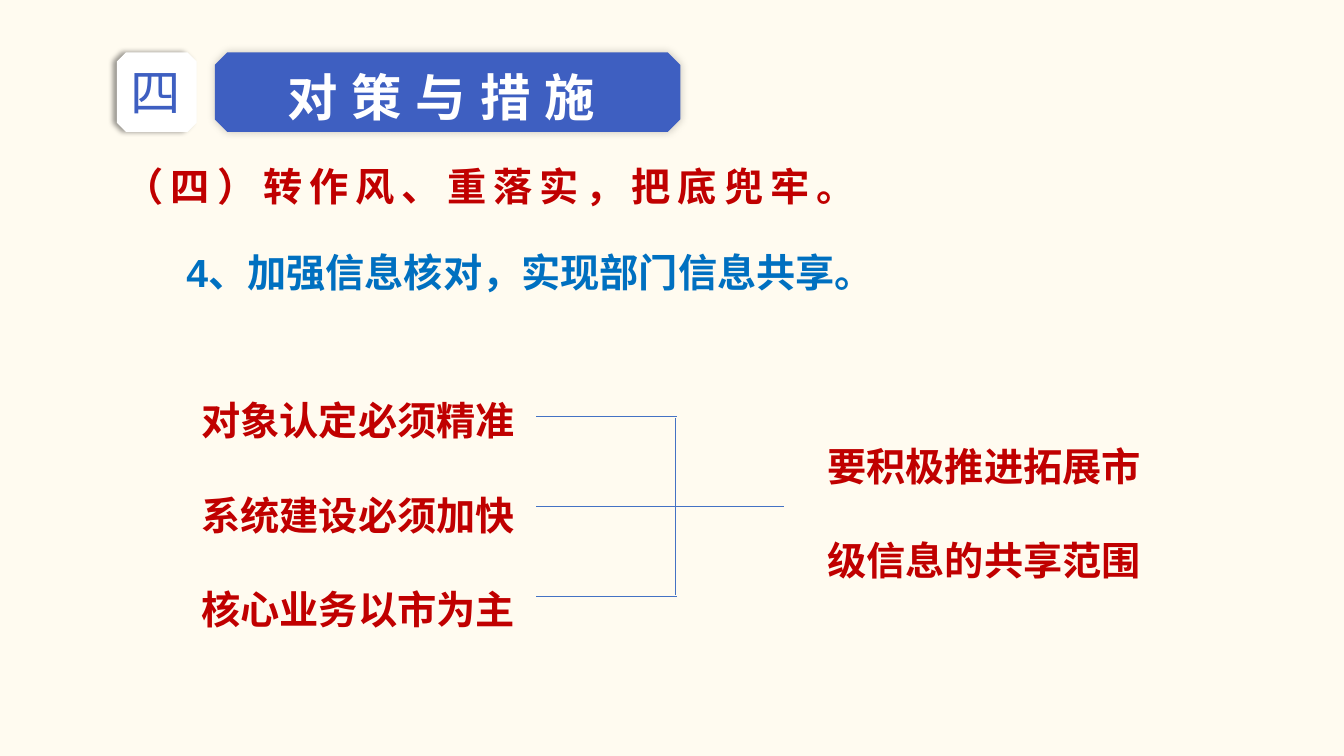
"""Build the slide on sharing information between departments."""
from lxml import etree
from pptx import Presentation
from pptx.dml.color import RGBColor
from pptx.enum.shapes import MSO_CONNECTOR, MSO_SHAPE
from pptx.oxml.ns import qn
from pptx.util import Inches, Pt

OCTAGON = MSO_SHAPE.OCTAGON
STRAIGHT = MSO_CONNECTOR.STRAIGHT
CREAM = RGBColor(0xFF, 0xFB, 0xF0)
WHITE = RGBColor(0xFF, 0xFF, 0xFF)
INDIGO = RGBColor(0x3E, 0x5F, 0xC1)
RED = RGBColor(0xC0, 0x00, 0x00)
BLUE = RGBColor(0x00, 0x70, 0xC0)
LINE = RGBColor(0x44, 0x72, 0xC4)
CJK = "Noto Sans CJK SC"

prs = Presentation()
prs.slide_width, prs.slide_height = Inches(13.33), Inches(7.5)
COL, ROW = prs.slide_width / 100, prs.slide_height / 100
s = prs.slides.add_slide(prs.slide_layouts[6])
s.background.fill.solid()
s.background.fill.fore_color.rgb = CREAM


def grid(*lengths):
    """Turn alternating columns and rows into slide lengths."""
    return [int(n * (ROW if i % 2 else COL)) for i, n in enumerate(lengths)]


def add_text(text, at, color=RED, size=28, bold=True, font="Arial",
             spacing=0, line_spacing=None, wrap=True):
    """Add a text box with one paragraph for each line of text."""
    tf = s.shapes.add_textbox(*grid(*at)).text_frame
    tf.word_wrap = wrap
    for i, line in enumerate(text.split("\n")):
        p = tf.add_paragraph() if i else tf.paragraphs[0]
        if line_spacing:
            p.line_spacing = line_spacing
        r = p.add_run()
        r.text = line
        r.font.name, r.font.size, r.font.bold = font, Pt(size), bold
        r.font.color.rgb = color
        rPr = r._r.get_or_add_rPr()
        if spacing:
            rPr.set("spc", str(spacing * 100))
        etree.SubElement(rPr, qn("a:ea"), typeface=CJK)


for left, width, corner, color, alpha, blur, dist, angle in (
        (15.98, 34.65, 0.159, INDIGO, 20, 6, 0, 315),
        (8.7, 5.93, 0.115, WHITE, 40, 4, 3, 180)):
    sp = s.shapes.add_shape(OCTAGON, *grid(left, 6.93, width, 10.53))
    sp.adjustments[0] = corner
    sp.fill.solid()
    sp.fill.fore_color.rgb = color
    sp.line.fill.background()
    sp.shadow.inherit = False
    shadow = etree.SubElement(
        sp._element.spPr.find(qn("a:effectLst")), qn("a:outerShdw"),
        blurRad=str(Pt(blur)), dist=str(Pt(dist)), dir=str(angle * 60000),
        algn="ctr", rotWithShape="0")
    black = etree.SubElement(shadow, qn("a:srgbClr"), val="000000")
    etree.SubElement(black, qn("a:alpha"), val=str(alpha * 1000))

add_text("对策与措施", (20.63, 4.13, 25.43, 13.47), color=WHITE, size=36,
         font=CJK, spacing=10, line_spacing=1.5, wrap=False)
add_text("四", (9, 7.47, 5.25, 9.47), color=INDIGO, size=36, bold=False,
         wrap=False)
add_text("（四）转作风、重落实，把底兜牢。", (8.55, 20.8, 56.48, 7.6),
         spacing=5, wrap=False)
add_text("4、加强信息核对，实现部门信息共享。", (13.13, 32.13, 85.95, 7.6),
         color=BLUE)
add_text("对象认定必须精准\n系统建设必须加快\n核心业务以市为主",
         (14.25, 45.6, 32.33, 39.07), line_spacing=2.0)
add_text("要积极推进拓展市级信息的共享范围", (60.83, 51.6, 27.68, 26.4),
         line_spacing=2.0)

branches = [(39.9, y, 50.4, y) for y in (55.07, 67, 78.93)]
spine = (50.25, 55.33, 50.25, 78.67)
outlet = (48.97, 66.93, 58.35, 66.93)
for ends in (*branches, spine, outlet):
    line = s.shapes.add_connector(STRAIGHT, *grid(*ends))
    line.line.color.rgb = LINE
    line.line.width = Pt(0.5)
    etree.SubElement(line._element.spPr, qn("a:effectLst"))

prs.save("out.pptx")
